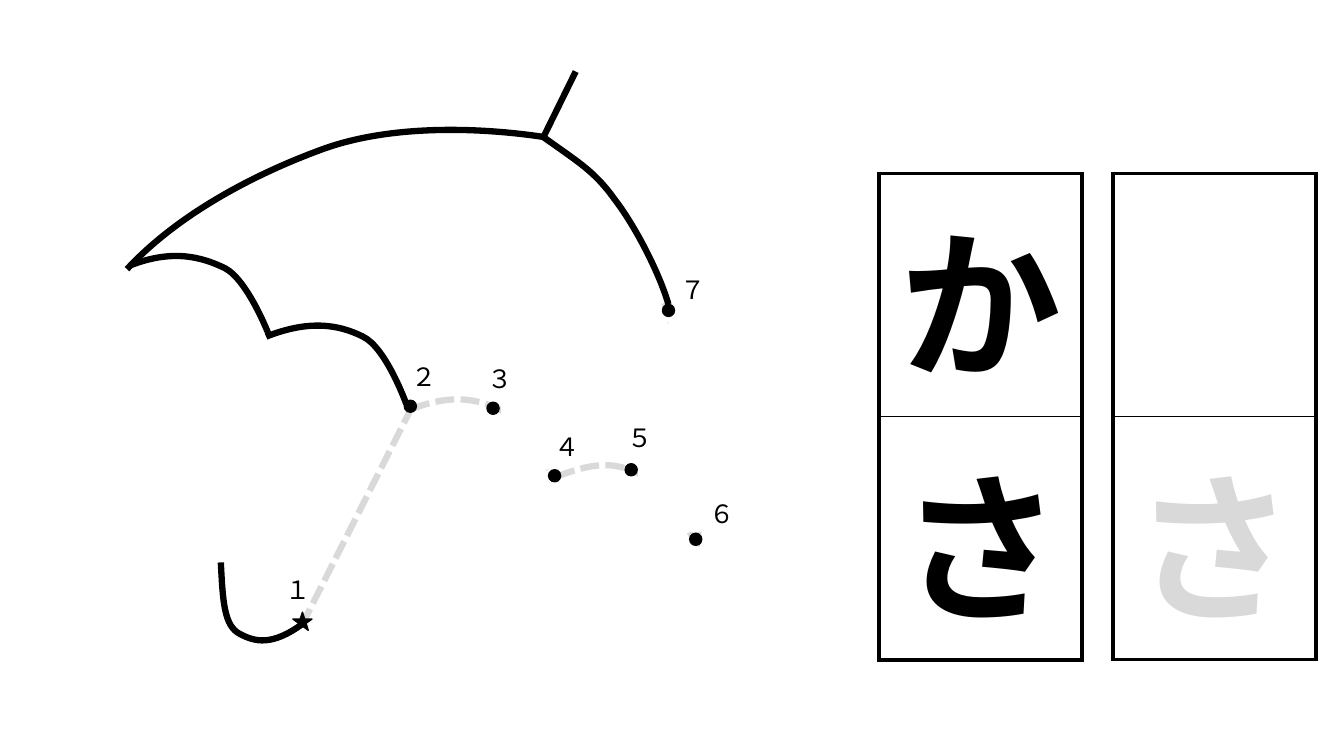
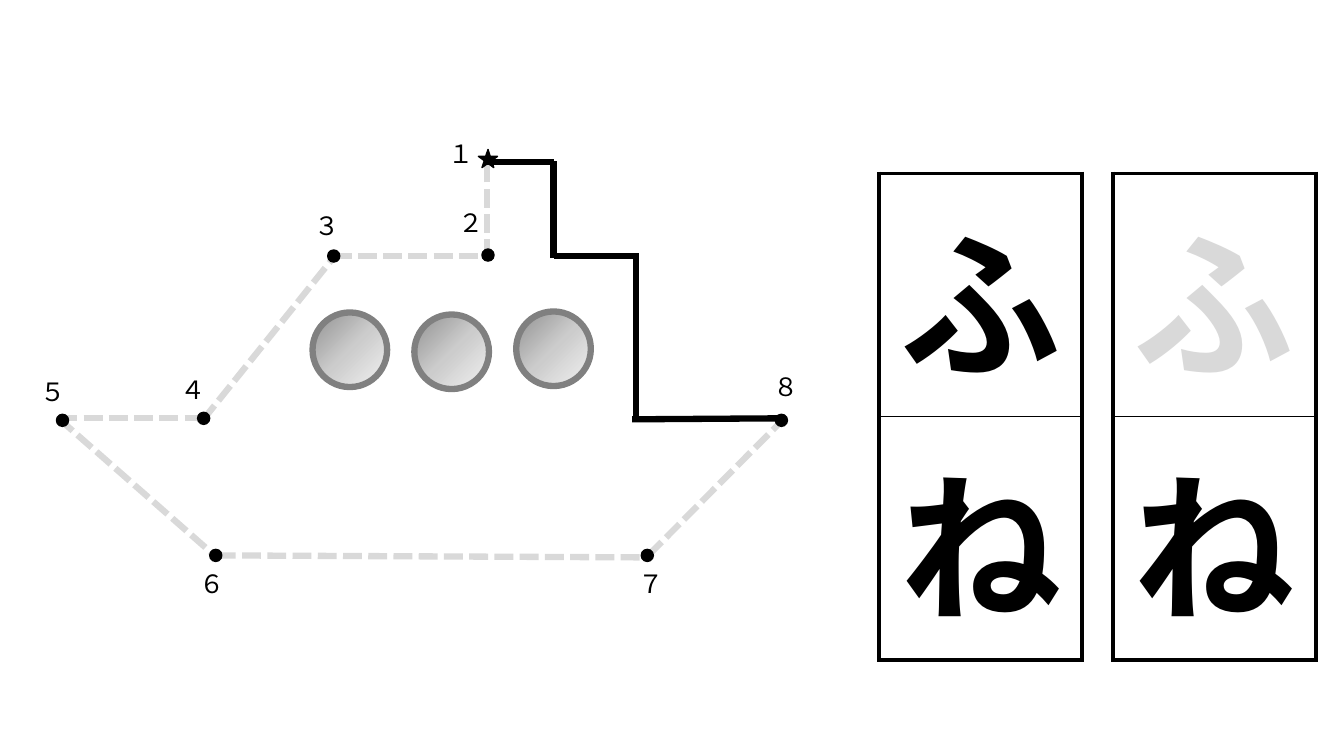
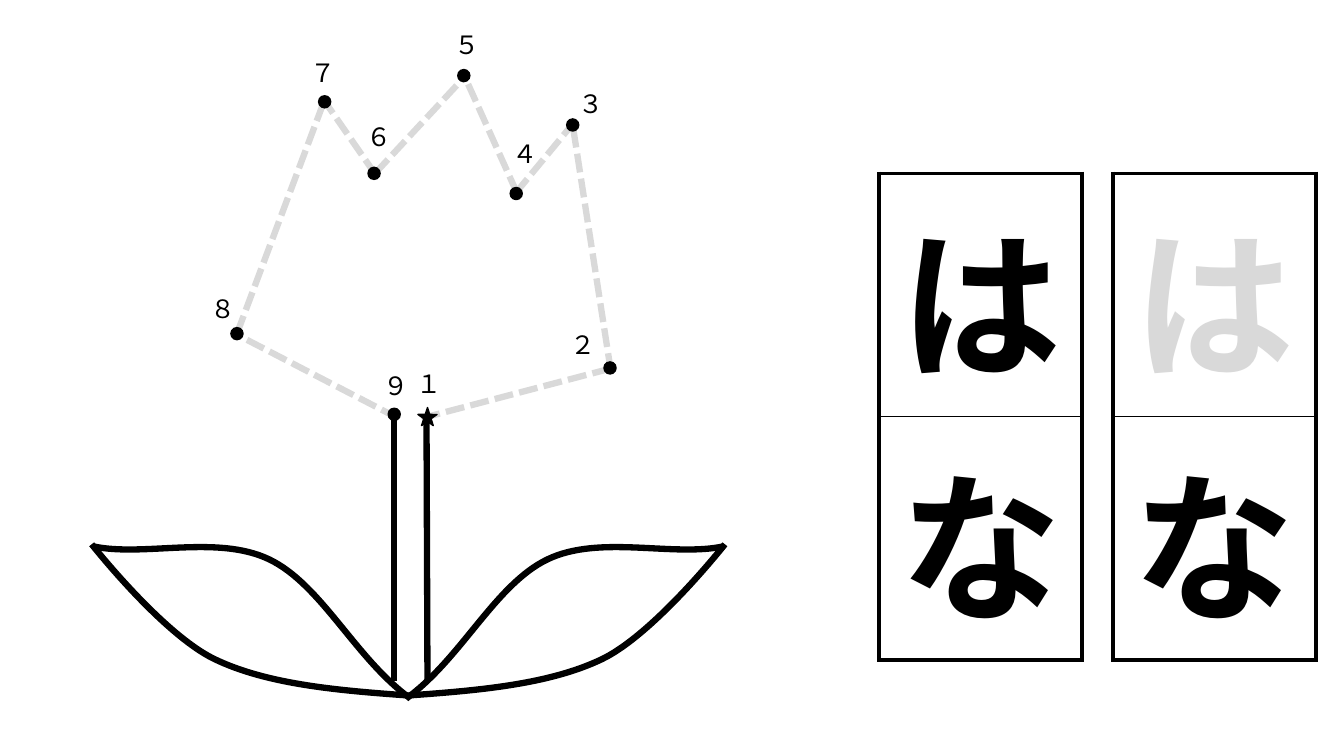
from pptx import Presentation
from pptx.dml.color import RGBColor
from pptx.enum import dml, shapes, text
from pptx.oxml import parse_xml
from pptx.oxml.ns import nsdecls, qn
from pptx.util import Inches, Pt

COLOURS = {"ink": "000000", "trace": "D9D9D9", "paper": "FFFFFF", "rim": "808080",
           "glass_dark": "909090", "glass_mid": "CCCCCC", "glass_light": "F2F2F2"}
FONT = "Noto Sans CJK JP"
DIGITS = "１２３４５６７８９"
STROKE = 4.5
CARD_TOP, CARD_WIDTH, ROW_HEIGHT = 1.72, 2.01, 2.41
CARD_LEFTS = (8.72, 11.04)
DOT_SIZE, LABEL_SIZE = (0.12, 0.12), (0.39, 0.4)
STAR_SIZE, STAR_ROTATION = (0.19, 0.18), 324.2
PORTHOLE_SIZE = 0.74
FLOWER_AXIS = 4.05

LEAF = [
    [(4.03, 6.93), (4.58, 6.53), (4.91, 5.8), (5.43, 5.55),
     (5.95, 5.3), (6.68, 5.53), (7.18, 5.42)],
    [(4.05, 6.9), (4.75, 6.85), (5.45, 6.79), (5.97, 6.54),
     (6.49, 6.29), (7.19, 5.4), (7.19, 5.4)],
]
MIRRORED_LEAF = [[(2 * FLOWER_AXIS - x, y) for x, y in curve] for curve in LEAF]

UMBRELLA = {
    "word": "かさ",
    "practice": [("", "trace"), ("さ", "trace")],
    "solid_lines": [(5.71, 0.71, 5.39, 1.36)],
    "dashed_lines": [(4.09, 4.03, 3, 6.19)],
    "solid_curves": [
        [(3, 6.19), (2.7, 6.41), (2.53, 6.37), (2.38, 6.29),
         (2.22, 6.21), (2.21, 5.96), (2.19, 5.58)],
        [(5.4, 1.36), (4.67, 1.25), (3.83, 1.25), (3.2, 1.48),
         (2.57, 1.71), (1.79, 2.1), (1.26, 2.67)],
        [(1.3, 2.63), (1.72, 2.47), (2, 2.55), (2.23, 2.66),
         (2.46, 2.78), (2.67, 3.33), (2.67, 3.33)],
        [(2.64, 3.34), (3.07, 3.17), (3.36, 3.22), (3.6, 3.34),
         (3.83, 3.45), (4.03, 4.01), (4.03, 4.01)],
        [(5.39, 1.36), (5.72, 1.6), (5.89, 1.69), (6.09, 1.97),
         (6.3, 2.24), (6.54, 2.71), (6.63, 3.02)],
    ],
    "dashed_curves": [
        [(4.08, 4.06), (4.51, 3.89), (4.78, 3.97), (5.01, 4.09),
         (5.25, 4.2), (5.49, 4.75), (5.49, 4.75), (5.53, 4.73)],
        [(5.38, 1.35), (5.91, 1.86), (6.44, 2.51), (6.64, 3.15),
         (6.85, 3.79), (7.02, 4.65), (6.91, 5.42)],
        [(5.52, 4.73), (5.95, 4.56), (6.13, 4.6), (6.36, 4.71),
         (6.59, 4.82), (6.9, 5.38), (6.9, 5.38), (6.93, 5.38)],
    ],
    "covers": [(5.8, 1.25, 0.41, 1.94, 329.5), (4.97, 4.01, 0.53, 0.65, 0),
               (6.33, 4.54, 0.5, 0.75, 0), (6.63, 3.15, 0.4, 2.13, 0)],
    "portholes": [],
    "labels": [(2.73, 5.65), (3.98, 3.54), (4.74, 3.56), (5.4, 4.23),
               (6.13, 4.14), (6.94, 4.89), (6.65, 2.67)],
    "marks": [(2.91, 6.09), (4.01, 3.97), (4.83, 3.99), (5.44, 4.66),
              (6.2, 4.6), (6.84, 5.29), (6.57, 3.02)],
}

SHIP = {
    "word": "ふね",
    "practice": [("ふ", "trace"), ("ね", "ink")],
    "solid_lines": [(6.27, 4.16, 7.74, 4.15), (6.31, 4.16, 6.31, 2.54),
                    (5.49, 2.54, 6.34, 2.54), (5.49, 2.56, 5.49, 1.6),
                    (4.83, 1.61, 5.49, 1.61)],
    "dashed_lines": [(4.83, 2.56, 4.83, 1.6), (2.15, 5.51, 6.43, 5.53),
                     (6.43, 5.51, 7.74, 4.19), (0.58, 4.15, 2.15, 5.53),
                     (0.58, 4.15, 2.05, 4.15), (2.01, 4.17, 3.32, 2.54),
                     (3.3, 2.54, 4.86, 2.54)],
    "solid_curves": [],
    "dashed_curves": [],
    "covers": [],
    "portholes": [(3.1, 3.1), (4.11, 3.12), (5.12, 3.09)],
    "labels": [(4.35, 1.32), (4.45, 2.01), (3.02, 2.04), (1.69, 3.66),
               (0.3, 3.68), (1.88, 5.59), (6.23, 5.59), (7.57, 3.63)],
    "marks": [(4.75, 1.5), (4.78, 2.47), (3.25, 2.48), (1.96, 4.09),
              (0.56, 4.11), (2.08, 5.45), (6.36, 5.45), (7.69, 4.11)],
}

FLOWER = {
    "word": "はな",
    "practice": [("は", "trace"), ("な", "ink")],
    "solid_lines": [(4.23, 4.11, 4.24, 6.76), (3.91, 4.09, 3.91, 6.76)],
    "dashed_lines": [(4.18, 4.15, 6.08, 3.65), (6.06, 3.69, 5.68, 1.24),
                     (5.11, 1.92, 5.68, 1.23), (5.13, 1.92, 4.6, 0.74),
                     (3.72, 1.72, 4.62, 0.75), (3.73, 1.74, 3.21, 0.99),
                     (3.95, 4.15, 2.35, 3.32), (2.35, 3.31, 3.22, 0.99)],
    "solid_curves": LEAF + MIRRORED_LEAF,
    "dashed_curves": [],
    "covers": [],
    "portholes": [],
    "labels": [(4.03, 3.61), (5.56, 3.22), (5.64, 0.83), (4.98, 1.32), (4.41, 0.24),
               (3.54, 1.15), (2.98, 0.52), (1.99, 2.86), (3.71, 3.62)],
    "marks": [(4.15, 4.06), (5.99, 3.59), (5.62, 1.18), (5.06, 1.86), (4.54, 0.69),
              (3.65, 1.66), (3.16, 0.95), (2.29, 3.25), (3.85, 4.05)],
}


def rgb(name):
    return RGBColor.from_string(COLOURS[name])


def inches(*values):
    return [Inches(value) for value in values]


def style_text(paragraph, size, colour, bold=False):
    for run in paragraph.runs:
        run.font.name = FONT
        run.font.size = Pt(size)
        run.font.bold = bold
        run.font.color.rgb = rgb(colour)
        run._r.get_or_add_rPr().append(
            parse_xml(f'<a:ea {nsdecls("a")} typeface="{FONT}"/>'))


def style_line(line, colour, width, dashed=False):
    line.color.rgb = rgb(colour)
    line.width = Pt(width)
    if dashed:
        line.dash_style = dml.MSO_LINE.SQUARE_DOT


def add_card(slide, left, letters):
    frame = slide.shapes.add_table(
        len(letters), 1, *inches(left, CARD_TOP, CARD_WIDTH, ROW_HEIGHT * len(letters)))
    table = frame.table
    table.first_row = table.horz_banding = False
    for index, (letter, colour) in enumerate(letters):
        table.rows[index].height = Inches(ROW_HEIGHT)
        cell = table.cell(index, 0)
        cell.vertical_anchor = text.MSO_ANCHOR.MIDDLE
        widths = {"L": 3, "R": 3, "T": 1 if index else 3,
                  "B": 3 if index == len(letters) - 1 else 1}
        for side, width in widths.items():
            cell._tc.get_or_add_tcPr().append(parse_xml(
                f'<a:ln{side} {nsdecls("a")} w="{Pt(width)}"><a:solidFill>'
                f'<a:srgbClr val="{COLOURS["ink"]}"/></a:solidFill></a:ln{side}>'))
        cell.fill.background()
        if letter:
            paragraph = cell.text_frame.paragraphs[0]
            paragraph.text = letter
            paragraph.alignment = text.PP_ALIGN.CENTER
            style_text(paragraph, 115, colour, bold=True)


def add_stroke(slide, ends, colour, dashed):
    line = slide.shapes.add_connector(shapes.MSO_CONNECTOR.STRAIGHT, *inches(*ends))
    line._element.spPr.append(parse_xml(f'<a:effectLst {nsdecls("a")}/>'))
    style_line(line.line, colour, STROKE, dashed)


def add_curve(slide, controls, colour, dashed):
    builder = slide.shapes.build_freeform(*inches(*controls[0]))
    builder.add_line_segments([inches(*point) for point in controls[1:]], close=False)
    shape = builder.convert_to_shape()
    segments = list(shape._element.iter(qn("a:lnTo")))
    for start in range(0, len(segments) - 2, 3):
        bezier = parse_xml(f'<a:cubicBezTo {nsdecls("a")}/>')
        segments[start].addprevious(bezier)
        for segment in segments[start:start + 3]:
            bezier.append(segment[0])
            segment.getparent().remove(segment)
    shape.shadow.inherit = False
    shape.fill.background()
    style_line(shape.line, colour, STROKE, dashed)


def add_solid(slide, kind, position, size, colour):
    shape = slide.shapes.add_shape(kind, *inches(*position, *size))
    shape.shadow.inherit = False
    shape.fill.solid()
    shape.fill.fore_color.rgb = rgb(colour)
    return shape


def add_cover(slide, left, top, width, height, rotation):
    cover = add_solid(slide, shapes.MSO_SHAPE.RECTANGLE, (left, top), (width, height), "paper")
    cover.rotation = rotation
    cover.line.fill.background()


def add_marks(slide, star_position, *dot_positions):
    star = add_solid(slide, shapes.MSO_SHAPE.STAR_5_POINT, star_position, STAR_SIZE, "ink")
    star.rotation = STAR_ROTATION
    for flip in ("flipH", "flipV"):
        star._element.spPr.xfrm.set(flip, "1")
    dots = [add_solid(slide, shapes.MSO_SHAPE.OVAL, position, DOT_SIZE, "ink")
            for position in dot_positions]
    for mark in (star, *dots):
        style_line(mark.line, "ink", 1)


def add_porthole(slide, position):
    shape = slide.shapes.add_shape(shapes.MSO_SHAPE.FLOWCHART_CONNECTOR,
                                   *inches(*position, PORTHOLE_SIZE, PORTHOLE_SIZE))
    stops = "".join(
        f'<a:gs pos="{index * 50000}"><a:srgbClr val="{COLOURS[name]}"/></a:gs>'
        for index, name in enumerate(("glass_dark", "glass_mid", "glass_light")))
    shape._element.spPr.append(parse_xml(
        f'<a:gradFill {nsdecls("a")}><a:gsLst>{stops}</a:gsLst>'
        '<a:path path="circle"><a:fillToRect r="100000" b="100000"/></a:path></a:gradFill>'))
    shape.shadow.inherit = False
    style_line(shape.line, "rim", STROKE)


def add_label(slide, position, digit):
    frame = slide.shapes.add_textbox(*inches(*position, *LABEL_SIZE)).text_frame
    frame.word_wrap = True
    frame.auto_size = text.MSO_AUTO_SIZE.SHAPE_TO_FIT_TEXT
    frame.text = digit
    style_text(frame.paragraphs[0], 18, "ink")


def add_strokes(slide, puzzle, kind, colour, dashed):
    for ends in puzzle[f"{kind}_lines"]:
        add_stroke(slide, ends, colour, dashed)
    for controls in puzzle[f"{kind}_curves"]:
        add_curve(slide, controls, colour, dashed)


def add_puzzle(presentation, puzzle):
    slide = presentation.slides.add_slide(presentation.slide_layouts[6])
    model = [(letter, "ink") for letter in puzzle["word"]]
    for left, letters in zip(CARD_LEFTS, (model, puzzle["practice"])):
        add_card(slide, left, letters)
    add_strokes(slide, puzzle, "dashed", "trace", True)
    for cover in puzzle["covers"]:
        add_cover(slide, *cover)
    add_strokes(slide, puzzle, "solid", "ink", False)
    for position in puzzle["portholes"]:
        add_porthole(slide, position)
    for digit, position in zip(DIGITS, puzzle["labels"]):
        add_label(slide, position, digit)
    add_marks(slide, *puzzle["marks"])


def main():
    presentation = Presentation()
    presentation.slide_width, presentation.slide_height = inches(13.33, 7.5)
    for puzzle in (UMBRELLA, SHIP, FLOWER):
        add_puzzle(presentation, puzzle)
    presentation.save("out.pptx")


if __name__ == "__main__":
    main()
